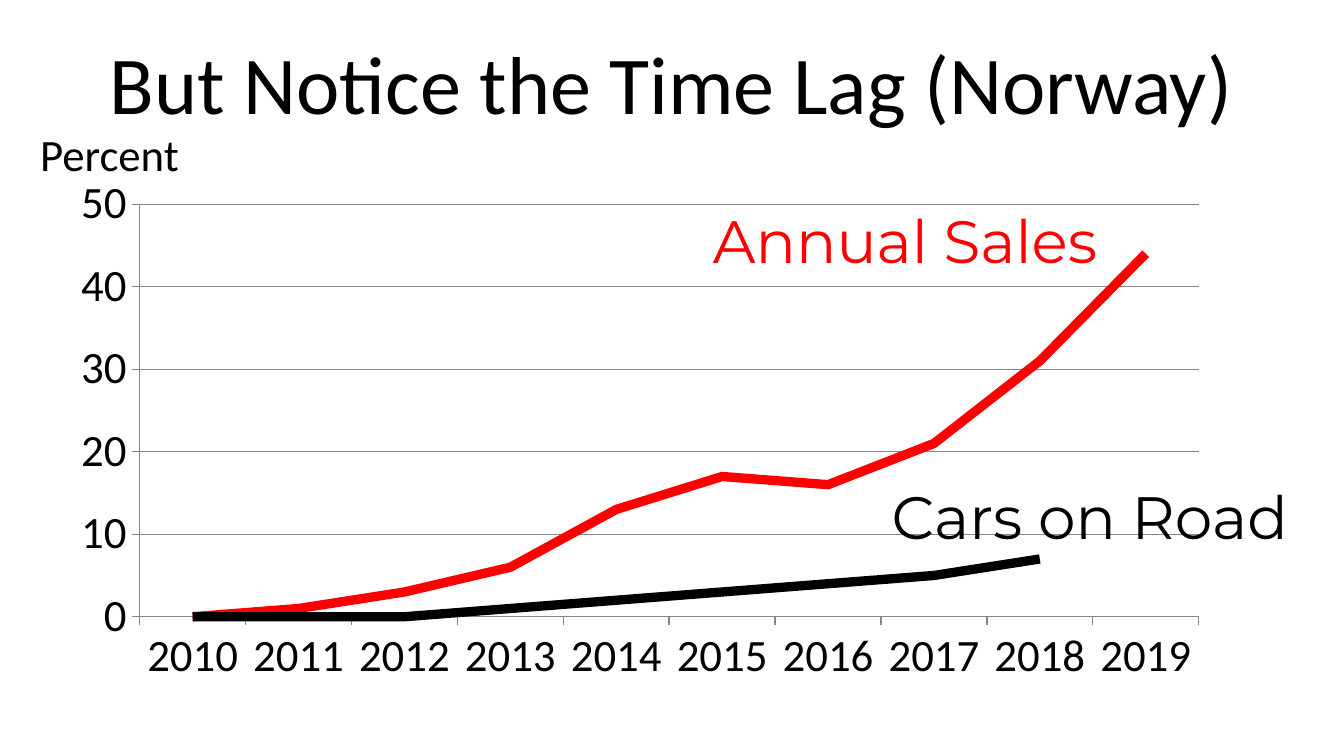
from dataclasses import dataclass

import lxml.etree
import pptx
import pptx.chart.data
import pptx.dml.color
import pptx.enum.chart
import pptx.enum.text
import pptx.util
from pptx.util import Inches


@dataclass(frozen=True)
class Theme:
    black: str = "000000"
    red: str = "FF0000"
    gray: str = "868686"
    body: str = "Calibri"
    label: str = "Montserrat"
    title_size: int = 44
    label_size: int = 32
    axis_size: int = 24
    chart_size: int = 18
    stroke: float = 5
    hairline: float = 0.75


@dataclass(frozen=True)
class Box:
    left: float
    top: float
    width: float
    height: float

    def inches(self) -> list:
        return [Inches(v) for v in (self.left, self.top, self.width, self.height)]


@dataclass(frozen=True)
class Label:
    text: str
    box: Box
    size: int
    face: str
    color: str
    center: bool = True
    middle: bool = False


@dataclass(frozen=True)
class Trend:
    name: str
    values: tuple
    color: str


THEME = Theme()
YEARS = [str(year) for year in range(2010, 2020)]
TRENDS = [
    Trend("Series 1", (0, 1, 3, 6, 13, 17, 16, 21, 31, 44), THEME.red),
    Trend("Series 2", (0, 0, 0, 1, 2, 3, 4, 5, 7, None), THEME.black),
]
LABELS = [
    Label("But Notice the Time Lag (Norway)", Box(0.5, 0.14, 9, 0.94),
          THEME.title_size, THEME.body, THEME.black, middle=True),
    Label("Annual Sales", Box(4.45, 1.47, 4.57, 0.63),
          THEME.label_size, THEME.label, THEME.red),
    Label("Cars on Road", Box(5.71, 3.52, 4.8, 0.63),
          THEME.label_size, THEME.label, THEME.black),
    Label("Percent", Box(0.2, 0.89, 1.34, 0.5),
          THEME.axis_size, THEME.body, THEME.black, center=False),
]
CHART = Box(0.43, 1.24, 8.66, 3.94)
PLOT = Box(1.04, 1.52, 7.88, 3.07)


def style(font, size: float, face: str, color: str) -> None:
    font.size = pptx.util.Pt(size)
    font.name = face
    font.color.rgb = pptx.dml.color.RGBColor.from_string(color)


def stroke(line, width: float, color: str) -> None:
    line.width = pptx.util.Pt(width)
    line.color.rgb = pptx.dml.color.RGBColor.from_string(color)


def add_label(slide, label: Label) -> None:
    frame = slide.shapes.add_textbox(*label.box.inches()).text_frame
    frame.word_wrap = True
    if label.middle:
        frame.vertical_anchor = pptx.enum.text.MSO_ANCHOR.MIDDLE
    line = frame.paragraphs[0]
    line.text = label.text
    if label.center:
        line.alignment = pptx.enum.text.PP_ALIGN.CENTER
    style(line.font, label.size, label.face, label.color)


def fix_plot(chart, outer: Box, inner: Box) -> None:
    """Pin the inner plot area as fractions of the chart frame."""
    area = chart._chartSpace.chart.plotArea
    for old in area.findall(pptx.oxml.ns.qn("c:layout")):
        area.remove(old)
    layout = lxml.etree.Element(pptx.oxml.ns.qn("c:layout"))
    manual = lxml.etree.SubElement(layout, pptx.oxml.ns.qn("c:manualLayout"))
    rules = {
        "layoutTarget": "inner", "xMode": "edge", "yMode": "edge",
        "x": (inner.left - outer.left) / outer.width,
        "y": (inner.top - outer.top) / outer.height,
        "w": inner.width / outer.width,
        "h": inner.height / outer.height,
    }
    for tag, value in rules.items():
        node = lxml.etree.SubElement(manual, pptx.oxml.ns.qn(f"c:{tag}"))
        node.set("val", str(value))
    area.insert(0, layout)


def add_chart(slide) -> None:
    data = pptx.chart.data.CategoryChartData(number_format="0")
    data.categories = YEARS
    for trend in TRENDS:
        data.add_series(trend.name, trend.values)
    chart = slide.shapes.add_chart(
        pptx.enum.chart.XL_CHART_TYPE.LINE, *CHART.inches(), data).chart
    chart.has_legend = False
    chart.has_title = False
    style(chart.font, THEME.chart_size, THEME.body, THEME.black)
    fix_plot(chart, CHART, PLOT)

    # Axes
    for axis in (chart.category_axis, chart.value_axis):
        axis.major_tick_mark = pptx.enum.chart.XL_TICK_MARK.OUTSIDE
        style(axis.tick_labels.font, THEME.axis_size, THEME.body, THEME.black)
        stroke(axis.format.line, THEME.hairline, THEME.gray)
    scale = chart.value_axis
    scale.minimum_scale, scale.maximum_scale, scale.major_unit = 0, 50, 10
    scale.tick_labels.number_format = "0"
    scale.tick_labels.number_format_is_linked = False
    scale.has_major_gridlines = True
    stroke(scale.major_gridlines.format.line, THEME.hairline, THEME.gray)

    # Lines
    plot = chart.plots[0]
    plot.vary_by_categories = False
    for series, trend in zip(plot.series, TRENDS):
        series.smooth = False
        series.marker.style = pptx.enum.chart.XL_MARKER_STYLE.NONE
        stroke(series.format.line, THEME.stroke, trend.color)


def main() -> None:
    deck = pptx.Presentation()
    # Widescreen, 16 to 9
    deck.slide_width = Inches(10)
    deck.slide_height = deck.slide_width * 9 // 16
    slide = deck.slides.add_slide(deck.slide_layouts[6])

    # Chart below, words on top
    add_chart(slide)
    for label in LABELS:
        add_label(slide, label)
    deck.save("out.pptx")


if __name__ == "__main__":
    main()
